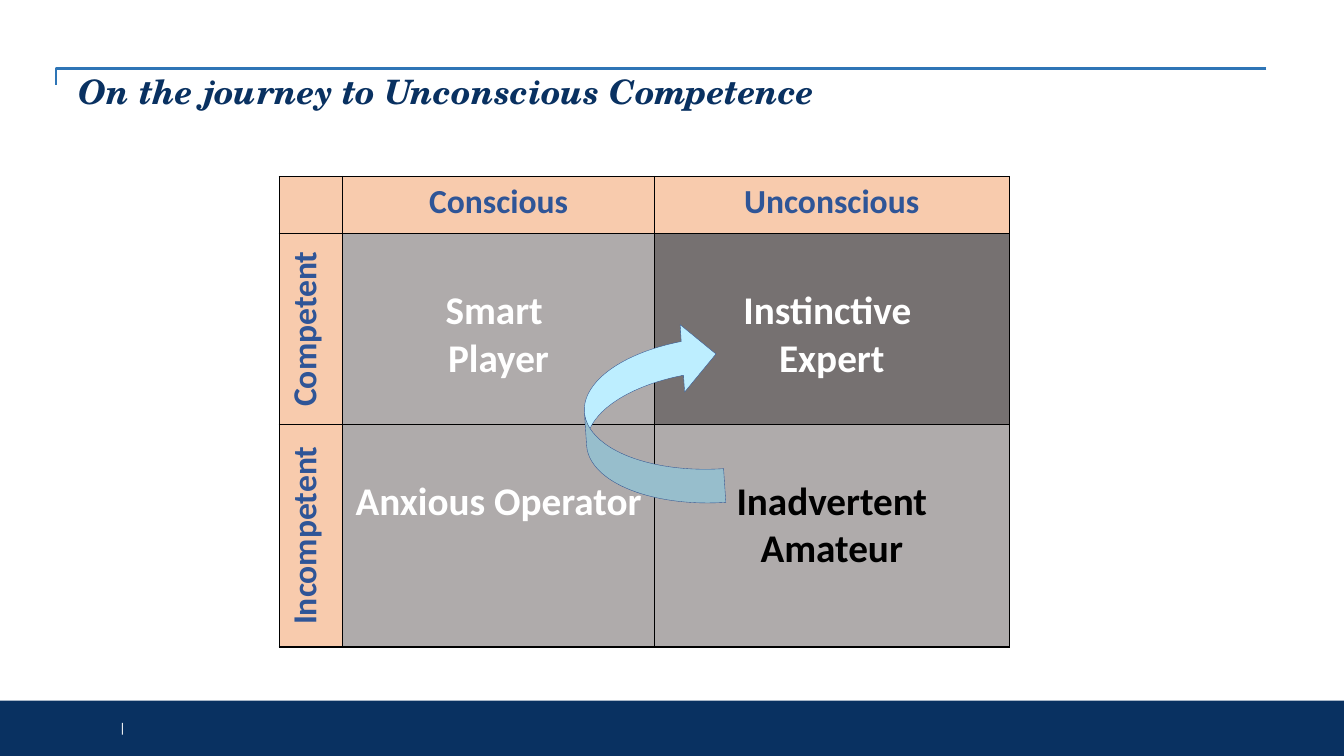
from dataclasses import dataclass

from lxml import etree
from pptx import Presentation
from pptx.dml.color import RGBColor
from pptx.enum.shapes import MSO_CONNECTOR, MSO_SHAPE
from pptx.enum.text import MSO_ANCHOR, PP_ALIGN
from pptx.oxml.ns import qn
from pptx.util import Inches, Pt

ELBOW = MSO_CONNECTOR.ELBOW
RECTANGLE = MSO_SHAPE.RECTANGLE
CURVED_ARROW = MSO_SHAPE.CURVED_LEFT_ARROW
MIDDLE = MSO_ANCHOR.MIDDLE
TOP = MSO_ANCHOR.TOP
CENTER = PP_ALIGN.CENTER
LEFT = PP_ALIGN.LEFT


@dataclass(frozen=True)
class Theme:
    navy: str = "093161"
    slate: str = "44546A"
    rule_blue: str = "2E75B6"
    label_blue: str = "2F5597"
    peach: str = "F8CBAD"
    grey: str = "AFABAB"
    dark_grey: str = "767171"
    arrow_fill: str = "BDEEFF"
    arrow_line: str = "325491"
    white: str = "FFFFFF"
    black: str = "000000"
    title_font: str = "TeX Gyre Schola"
    table_font: str = "Calibri"
    footer_font: str = "Arial"
    title_size: int = 24
    label_size: int = 24
    stage_size: int = 28
    footer_size: int = 9


THEME = Theme()


def rgb(value):
    return RGBColor.from_string(value)


def write(frame, text, color, align=LEFT, **font_values):
    """Fill the first paragraph of a text frame."""
    para = frame.paragraphs[0]
    para.text = text
    para.alignment = align
    for span in para.runs:
        for name, value in font_values.items():
            setattr(span.font, name, value)
        span.font.color.rgb = rgb(color)
    return para


def add_text_box(page, box, margins, anchor):
    """Add a wrapping text box; margins run left, top, right, bottom."""
    frame = page.shapes.add_textbox(*map(Inches, box)).text_frame
    frame.word_wrap = True
    frame.vertical_anchor = anchor
    for side, value in zip(("left", "top", "right", "bottom"), margins):
        setattr(frame, f"margin_{side}", Inches(value))
    return frame


def add_title(page, box):
    left, top, width, height = box
    # Two corner rules, each running left and then down
    corner_x, corner_y, drop = left - 0.22, top - 0.08, 0.16
    for color, weight, shift in ((THEME.slate, 1, 0), (THEME.rule_blue, 1.5, 0.01)):
        rule_y = corner_y + shift
        rule = page.shapes.add_connector(
            ELBOW, Inches(left + width), Inches(rule_y),
            Inches(corner_x), Inches(rule_y + drop))
        rule.line.color.rgb = rgb(color)
        rule.line.width = Pt(weight)
        properties = rule._element.spPr
        properties.find(qn("a:prstGeom")).set("prst", "bentConnector2")
        etree.SubElement(properties, qn("a:effectLst"))

    # Heading
    frame = add_text_box(page, box, (0, 0, 0, 0), TOP)
    para = write(frame, "On the journey to Unconscious Competence", THEME.navy,
                 name=THEME.title_font, size=Pt(THEME.title_size), bold=True, italic=True)
    para.line_spacing = 0.9


def add_footer(page, box):
    left, top, width, height = box
    band = page.shapes.add_shape(RECTANGLE, *map(Inches, box))
    band.shadow.inherit = False
    band.fill.solid()
    band.fill.fore_color.rgb = rgb(THEME.navy)
    band.line.fill.background()

    # Page number divider
    frame = add_text_box(page, (left + 1.2, top + 0.14, 0.11, 0.25),
                         (0, 0.05, 0.1, 0.05), MIDDLE)
    write(frame, "|", THEME.white, name=THEME.footer_font, size=Pt(THEME.footer_size))


def style_cell(cell, fill, vertical):
    """Give a cell its direction, black borders and fill."""
    properties = cell._tc.get_or_add_tcPr()
    if vertical:
        properties.set("vert", "vert270")
    for side in ("lnL", "lnR", "lnT", "lnB"):
        border = etree.SubElement(properties, qn(f"a:{side}"), w=str(Pt(1)))
        paint = etree.SubElement(border, qn("a:solidFill"))
        etree.SubElement(paint, qn("a:srgbClr"), val=THEME.black)
    cell.fill.solid()
    cell.fill.fore_color.rgb = rgb(fill)


def add_matrix(page, box):
    column_widths = (0.63, 3.09, 3.52)
    row_heights = (0.57, 1.89, 2.21)
    wording = (
        ("", "Conscious", "Unconscious"),
        ("Competent", "Smart \vPlayer", "Instinctive \vExpert"),
        ("Incompetent", "Anxious Operator", "Inadvertent Amateur"),
    )
    # Stages that differ from white text on grey
    stage_fills = {(1, 2): THEME.dark_grey}
    stage_colors = {(2, 2): THEME.black}

    table = page.shapes.add_table(3, 3, *map(Inches, box)).table
    table.first_row = table.horz_banding = False
    for column, width in zip(table.columns, column_widths):
        column.width = Inches(width)
    for row, height in zip(table.rows, row_heights):
        row.height = Inches(height)

    for r, texts in enumerate(wording):
        for c, text in enumerate(texts):
            cell = table.cell(r, c)
            if r == 0 or c == 0:
                fill, color, size = THEME.peach, THEME.label_blue, THEME.label_size
            else:
                fill = stage_fills.get((r, c), THEME.grey)
                color = stage_colors.get((r, c), THEME.white)
                size = THEME.stage_size
                cell.margin_top = Inches(0.53)
            style_cell(cell, fill, vertical=c == 0 and r > 0)
            if text:
                write(cell.text_frame, text, color, CENTER,
                      name=THEME.table_font, size=Pt(size), bold=True)


def add_journey_arrow(page, box):
    arrow = page.shapes.add_shape(CURVED_ARROW, *map(Inches, box))
    arrow.shadow.inherit = False
    arrow.rotation = 176.2
    arrow.fill.solid()
    arrow.fill.fore_color.rgb = rgb(THEME.arrow_fill)
    arrow.line.color.rgb = rgb(THEME.arrow_line)
    arrow.line.width = Pt(0.25)


def main():
    deck = Presentation()
    deck.slide_width, deck.slide_height = Inches(13.33), Inches(7.5)
    page = deck.slides.add_slide(deck.slide_layouts[6])
    add_footer(page, (0, 6.95, 13.33, 0.55))
    add_title(page, (0.78, 0.75, 11.78, 1))
    add_matrix(page, (2.77, 1.75, 7.24, 4.67))
    add_journey_arrow(page, (5.8, 3.22, 1.34, 1.81))
    deck.save("out.pptx")


if __name__ == "__main__":
    main()
